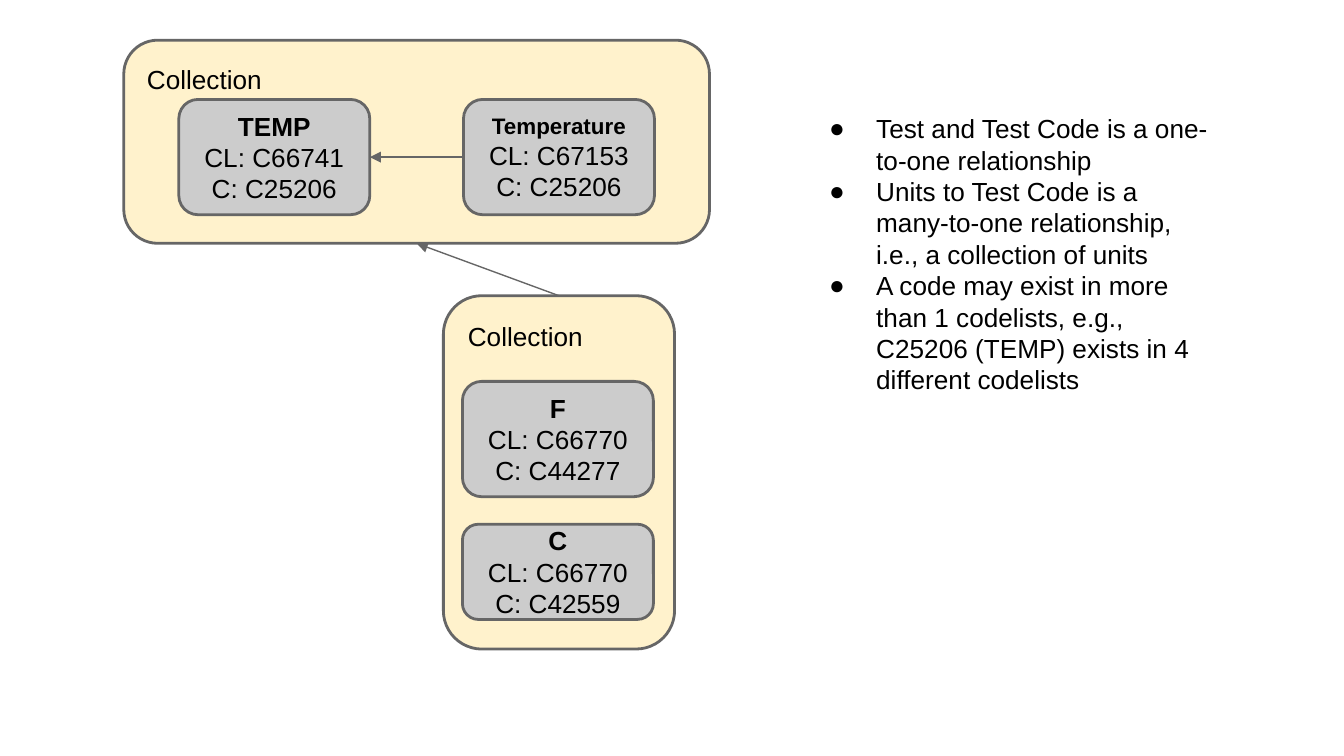
from lxml import etree
from pptx import Presentation
from pptx.dml.color import RGBColor
from pptx.enum.shapes import MSO_CONNECTOR, MSO_SHAPE
from pptx.enum.text import MSO_ANCHOR, PP_ALIGN
from pptx.oxml.ns import qn
from pptx.util import Cm, Pt

ROUNDED = MSO_SHAPE.ROUNDED_RECTANGLE
STRAIGHT = MSO_CONNECTOR.STRAIGHT
TOP, MIDDLE = MSO_ANCHOR.TOP, MSO_ANCHOR.MIDDLE
LEFT, CENTER = PP_ALIGN.LEFT, PP_ALIGN.CENTER
SITE_TOP, SITE_LEFT, SITE_BOTTOM, SITE_RIGHT = range(4)

COLORS = {"collection": "FFF2CC", "code": "CCCCCC", "line": "666666", "text": "000000"}
BLANK_LAYOUT = 6
TERM_WIDTH, TERM_HEIGHT = 3.61, 2.18
TERM_ROW_TOP = 1.88
UNIT_LEFT = 8.74

NOTES = [
    "Test and Test Code is a one-to-one relationship",
    "Units to Test Code is a many-to-one relationship, i.e., a collection of units",
    "A code may exist in more than 1 codelists, e.g., C25206 (TEMP) exists in 4 different codelists",
]


def color(name):
    return RGBColor.from_string(COLORS[name])


class CodelistSlide:
    font_name = "Arial"
    font_size = 14
    inset = 0.25

    def __init__(self, slide):
        self.slide = slide

    def fill_text(self, frame, lines, align=LEFT, anchor=TOP):
        """Fill a text frame; each line is (text, size, bold)."""
        inset = Cm(self.inset)
        frame_format = {
            "word_wrap": True, "vertical_anchor": anchor,
            "margin_left": inset, "margin_right": inset,
            "margin_top": inset, "margin_bottom": inset,
        }
        for name, value in frame_format.items():
            setattr(frame, name, value)
        for index, (text, size, bold) in enumerate(lines):
            para = frame.add_paragraph() if index else frame.paragraphs[0]
            para.alignment = align
            span = para.add_run()
            span.text = text
            font_format = {"name": self.font_name, "size": Pt(size), "bold": bold}
            for name, value in font_format.items():
                setattr(span.font, name, value)
            span.font.color.rgb = color("text")

    def rounded_box(self, shapes, place, fill):
        box = shapes.add_shape(ROUNDED, *map(Cm, place))
        box.shadow.inherit = False
        box.fill.solid()
        box.fill.fore_color.rgb = color(fill)
        box.line.color.rgb = color("line")
        box.line.width = Pt(1.5)
        return box

    def collection(self, shapes, *place):
        box = self.rounded_box(shapes, place, "collection")
        self.fill_text(box.text_frame, [("Collection", self.font_size, False)])
        return box

    def term(self, shapes, left, top, name, codelist, code,
             height=TERM_HEIGHT, name_size=font_size):
        box = self.rounded_box(shapes, (left, top, TERM_WIDTH, height), "code")
        lines = [
            (name, name_size, True),
            (f"CL: {codelist}", self.font_size, False),
            (f"C: {code}", self.font_size, False),
        ]
        self.fill_text(box.text_frame, lines, CENTER, MIDDLE)
        return box

    def arrow(self, target, target_site, source, source_site):
        """Link two boxes, with the arrowhead at the target."""
        arrow = self.slide.shapes.add_connector(STRAIGHT, 0, 0, 0, 0)
        arrow.begin_connect(target, target_site)
        arrow.end_connect(source, source_site)
        arrow.line.color.rgb = color("line")
        arrow.line.width = Pt(0.75)
        line = arrow.line._get_or_add_ln()
        etree.SubElement(line, qn("a:headEnd"), type="triangle", w="med", len="med")
        etree.SubElement(arrow._element.spPr, qn("a:effectLst"))

    def bullet_list(self, items, *place):
        box = self.slide.shapes.add_textbox(*map(Cm, place))
        self.fill_text(box.text_frame, [(item, self.font_size, False) for item in items])
        for para in box.text_frame.paragraphs:
            properties = para._p.get_or_add_pPr()
            properties.set("marL", str(Cm(1.27)))
            properties.set("indent", str(Cm(-0.89)))
            bullet_color = etree.SubElement(properties, qn("a:buClr"))
            etree.SubElement(bullet_color, qn("a:srgbClr"), val=COLORS["text"])
            etree.SubElement(properties, qn("a:buFont"), typeface=self.font_name)
            etree.SubElement(properties, qn("a:buChar"), char="●")


def main():
    deck = Presentation()
    deck.slide_width, deck.slide_height = Cm(25.4), Cm(14.29)
    page = CodelistSlide(deck.slides.add_slide(deck.slide_layouts[BLANK_LAYOUT]))
    shapes = page.slide.shapes

    tests = page.collection(shapes, 2.34, 0.76, 11.07, 3.84)
    test_code = page.term(shapes, 3.38, TERM_ROW_TOP, "TEMP", "C66741", "C25206")
    test_name = page.term(shapes, 8.76, TERM_ROW_TOP, "Temperature", "C67153", "C25206",
                          name_size=12)

    unit_shapes = shapes.add_group_shape().shapes
    units = page.collection(unit_shapes, 8.38, 5.59, 4.37, 6.68)
    page.term(unit_shapes, UNIT_LEFT, 7.21, "F", "C66770", "C44277")
    page.term(unit_shapes, UNIT_LEFT, 9.91, "C", "C66770", "C42559", height=1.8)

    page.arrow(test_code, SITE_RIGHT, test_name, SITE_LEFT)
    page.arrow(tests, SITE_BOTTOM, units, SITE_TOP)
    page.bullet_list(NOTES, 15.04, TERM_ROW_TOP, 8.05, 10.39)

    deck.save("out.pptx")


if __name__ == "__main__":
    main()
